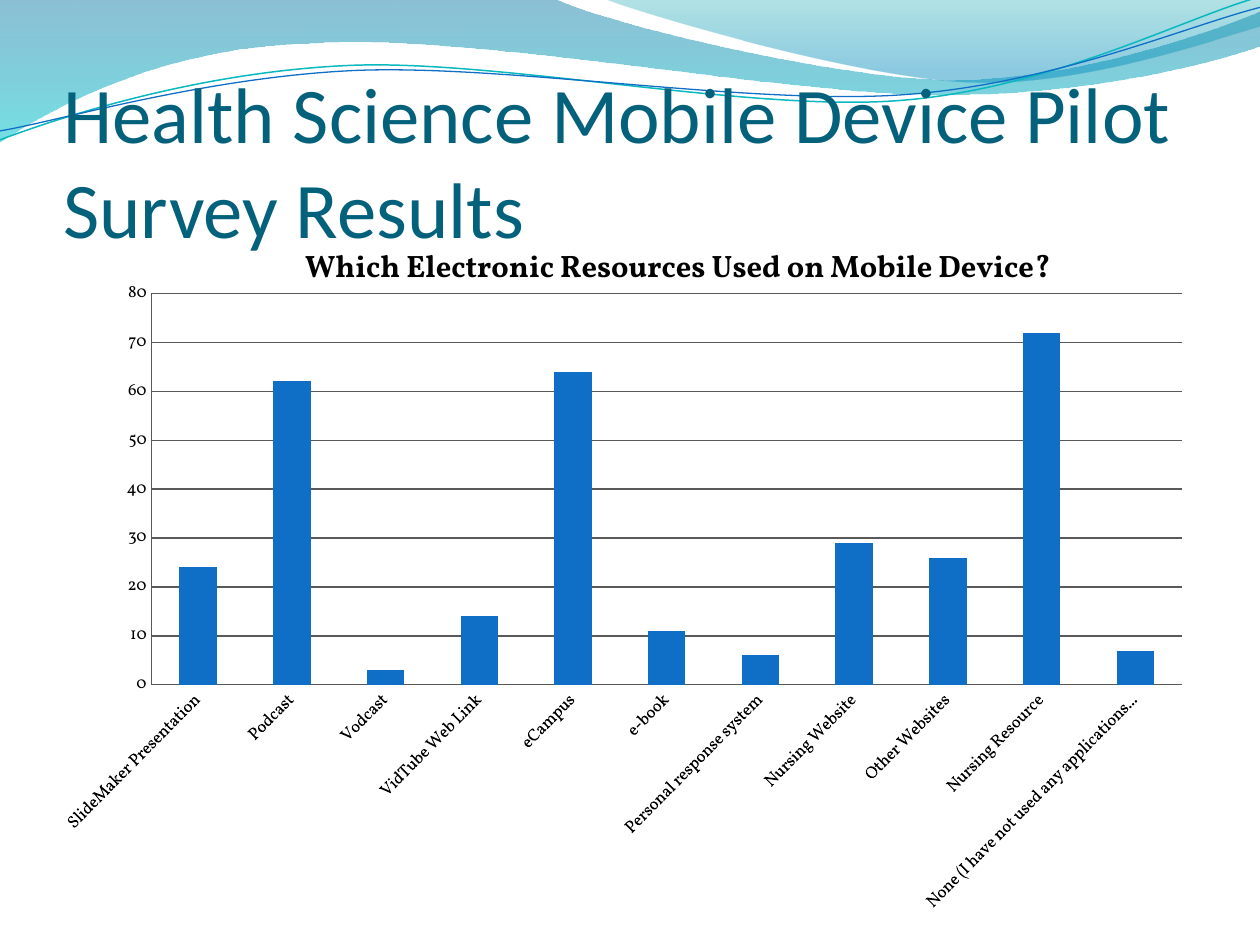
"""Build the survey results slide with a wave header and a column chart."""
import lxml.etree
import pptx
import pptx.chart.data
import pptx.dml.color
import pptx.enum.chart
import pptx.enum.text
import pptx.oxml
import pptx.oxml.ns
import pptx.util

Cm = pptx.util.Cm
Pt = pptx.util.Pt
qn = pptx.oxml.ns.qn

BAND = [(0, 0), (11.18, -0.03), (12.09, 0.43, 16.87, 1.6, 19.25, 1.6),
        (21.67, 1.6, 24.33, 0.66, 25.4, 0.23), (25.43, 0.91),
        (24.97, 1.12, 22.1, 1.93, 18.95, 1.91),
        (15.8, 1.91, 9.7, 0.71, 6.53, 0.86),
        (3.28, 0.91, 1.17, 2.11, -0.03, 2.87), (0, 0)]
CREST = [(12.17, -0.03), (12.93, 0.28, 17.32, 1.57, 19.53, 1.65),
         (21.74, 1.75, 24.41, 0.81, 25.4, 0.53), (25.4, 0), (12.17, -0.03)]
TEAL_LINE = [(0, 2.82), (1.22, 2.36, 4.01, 1.45, 7.04, 1.32),
             (10.03, 1.19, 15.06, 2.26, 18.11, 2.03),
             (21.16, 1.8, 23.83, 0.38, 25.35, -0.05)]
BLUE_LINE = [(0, 2.64), (1.19, 2.44, 4.17, 1.55, 7.19, 1.42),
             (10.24, 1.3, 15.16, 2.13, 18.21, 1.91),
             (21.23, 1.7, 23.9, 0.53, 25.4, 0.15)]
RESOURCES = {
    "SlideMaker Presentation": 24, "Podcast": 62, "Vodcast": 3,
    "VidTube Web Link": 14, "eCampus": 64, "e-book": 11,
    "Personal response system": 6, "Nursing Website": 29,
    "Other Websites": 26, "Nursing Resource": 72,
    "None (I have not used any applications this week)": 7,
}


def rgb(value):
    return pptx.dml.color.RGBColor.from_string(value)


def write_text(tf, text, size, font, color, bold=False):
    p = tf.paragraphs[0]
    r = p.add_run()
    r.text = text
    r.font.size = Pt(size)
    r.font.name = font
    r.font.bold = bold
    r.font.color.rgb = rgb(color)


def bend(sp, segments):
    lines = iter(sp.element.xpath(".//a:path/a:lnTo"))
    for seg in segments[1:]:
        group = [next(lines) for _ in range(len(seg) // 2)]
        if len(group) == 3:
            curve = group[0].makeelement(qn("a:cubicBezTo"))
            group[0].addprevious(curve)
            for line in group:
                curve.append(line[0])
                line.getparent().remove(line)


def add_outline(s, segments, close):
    points = [(Cm(seg[i]), Cm(seg[i + 1]))
              for seg in segments for i in range(0, len(seg), 2)]
    builder = s.shapes.build_freeform(*points[0])
    builder.add_line_segments(points[1:], close=close)
    sp = builder.convert_to_shape()
    bend(sp, segments)
    sp.shadow.inherit = False
    return sp


def add_wave(s, segments, stops):
    sp = add_outline(s, segments, True)
    sp.line.fill.background()
    sp.fill.gradient()
    sp.fill.gradient_angle = 270
    for stop, (position, color, _) in zip(sp.fill.gradient_stops, stops):
        stop.position = position
        stop.color.rgb = rgb(color)
    colors = sp.element.xpath(".//a:gsLst//a:srgbClr")
    for clr, (_, _, opacity) in zip(colors, stops):
        lxml.etree.SubElement(clr, qn("a:alpha")).set("val", str(opacity * 1000))


def add_curve(s, segments, color, width):
    sp = add_outline(s, segments, False)
    sp.fill.background()
    sp.line.color.rgb = rgb(color)
    sp.line.width = Pt(width)


def add_title(s, text):
    tf = s.shapes.add_textbox(Cm(1.28), Cm(1.95), Cm(22.86), Cm(3.17)).text_frame
    tf.word_wrap = True
    tf.vertical_anchor = pptx.enum.text.MSO_ANCHOR.BOTTOM
    tf.margin_left = tf.margin_right = tf.margin_bottom = 0
    tf.margin_top = Cm(0.13)
    write_text(tf, text, size=45, font="Calibri", color="04617B")


def set_layout(parent, index, target=None, **percents):
    for old in parent.findall(qn("c:layout")):
        parent.remove(old)
    layout = parent.makeelement(qn("c:layout"))
    manual = lxml.etree.SubElement(layout, qn("c:manualLayout"))
    values = {"layoutTarget": target} if target else {}
    values.update(xMode="edge", yMode="edge")
    values.update({k: round(v / 100, 4) for k, v in percents.items()})
    for name, value in values.items():
        lxml.etree.SubElement(manual, qn(f"c:{name}")).set("val", str(value))
    parent.insert(index, layout)


def style_axis(axis):
    axis.major_tick_mark = axis.minor_tick_mark = pptx.enum.chart.XL_TICK_MARK.NONE
    axis.format.line.color.rgb = rgb("595959")
    axis.format.line.width = Pt(0.75)
    axis.tick_labels.font.size = Pt(10)


def add_column_chart(s, title, values):
    data = pptx.chart.data.CategoryChartData()
    data.categories = list(values)
    data.add_series("Series 1", list(values.values()))
    chart = s.shapes.add_chart(
        pptx.enum.chart.XL_CHART_TYPE.COLUMN_CLUSTERED,
        Cm(1.27), Cm(4.45), Cm(24.13), Cm(13.97), data).chart
    chart.has_legend = False
    chart.font.size = Pt(10)
    chart.font.name = "Vollkorn"
    chart.font.color.rgb = rgb("000000")

    chart.has_title = True
    write_text(chart.chart_title.text_frame, title,
               size=18, font="Vollkorn", color="000000", bold=True)
    set_layout(chart.element.xpath("c:chart/c:title")[0], 1, x=17.2, y=2.6)
    set_layout(chart.element.xpath("c:chart/c:plotArea")[0], 0,
               target="inner", x=4.4, y=10.7, w=88.9, h=57.6)

    for axis in (chart.category_axis, chart.value_axis):
        style_axis(axis)
    chart.element.xpath(".//c:catAx/c:txPr/a:bodyPr")[0].set("rot", "-2700000")
    axis = chart.value_axis
    axis.minimum_scale, axis.maximum_scale, axis.major_unit = 0, 80, 10
    axis.has_major_gridlines = True
    axis.major_gridlines.format.line.color.rgb = rgb("595959")
    axis.major_gridlines.format.line.width = Pt(0.75)

    plot = chart.plots[0]
    plot.gap_width = 150
    plot.vary_by_categories = False
    fill = plot.series[0].format.fill
    fill.solid()
    fill.fore_color.rgb = rgb("0F6FC6")


def main():
    prs = pptx.Presentation()
    prs.slide_width, prs.slide_height = Cm(25.4), Cm(19.05)
    s = prs.slides.add_slide(prs.slide_layouts[6])
    add_wave(s, BAND, [(0, "0074A1", 45), (1, "00C6CF", 55)])
    add_wave(s, CREST, [(0, "00A1A9", 30), (0.8, "008BBF", 45)])
    add_curve(s, TEAL_LINE, "0AB8BF", 0.85)
    add_curve(s, BLUE_LINE, "0F6FC6", 0.75)
    add_title(s, "Health Science Mobile Device Pilot Survey Results")
    add_column_chart(s, "Which Electronic Resources Used on Mobile Device?", RESOURCES)
    prs.save("out.pptx")


if __name__ == "__main__":
    main()
